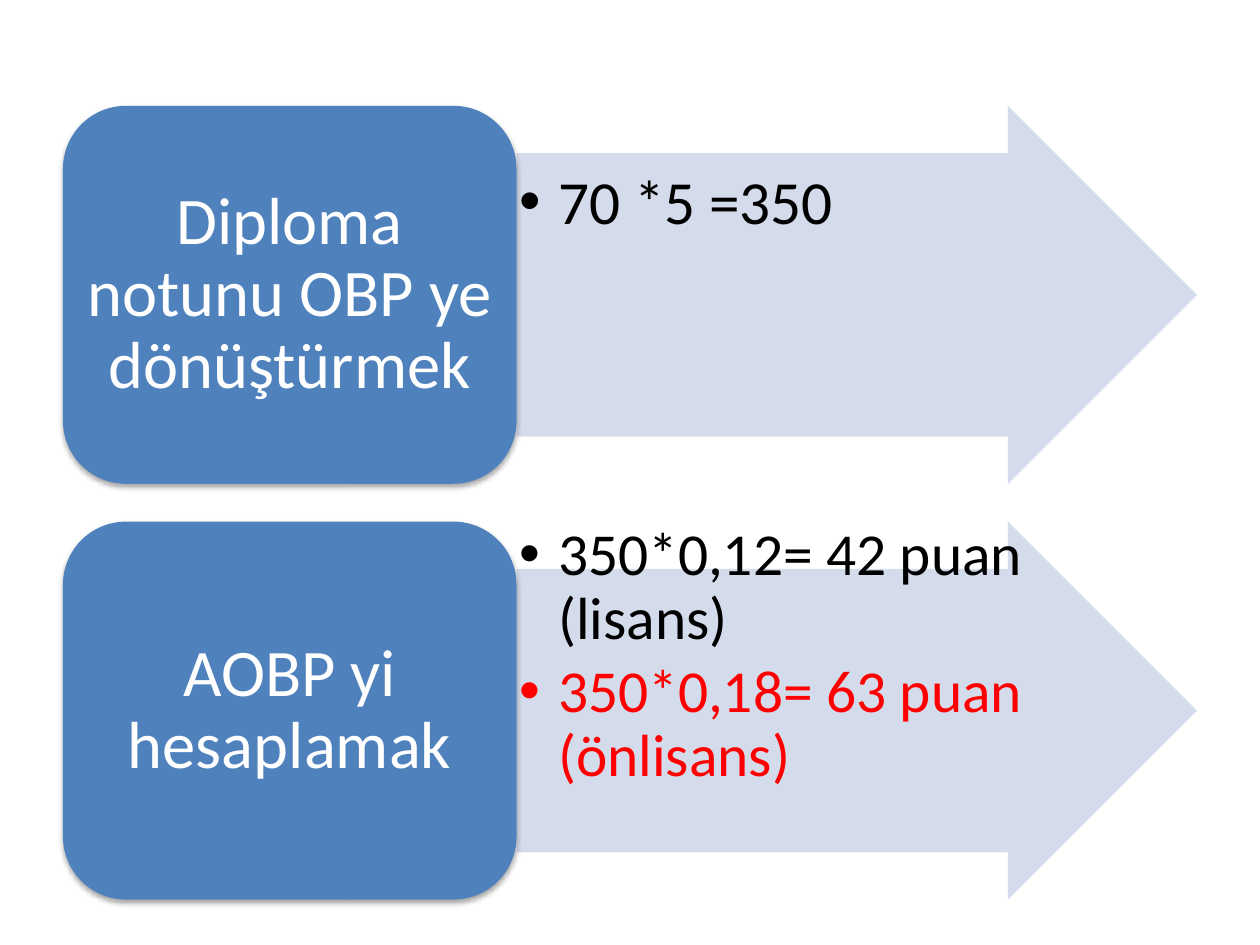
"""Build a slide of two calculation steps, each a box with an arrow of results."""
from lxml.etree import SubElement as Sub
from pptx import Presentation
from pptx.dml.color import RGBColor
from pptx.enum.shapes import MSO_SHAPE as Shape
from pptx.enum.text import MSO_ANCHOR as Anchor, PP_ALIGN as Align
from pptx.oxml.ns import qn
from pptx.util import Inches, Pt

BLUE = RGBColor(0x4F, 0x81, 0xBD)
PALE = RGBColor(0xD0, 0xD8, 0xE8)
WHITE = RGBColor(255, 255, 255)
BLACK = RGBColor(0, 0, 0)
RED = RGBColor(255, 0, 0)

STEPS = [
    {"title": "Diploma notunu OBP ye dönüştürmek", "size": 35, "drop": 0.53,
     "items": [("70 *5 =350", BLACK)]},
    {"title": "AOBP yi hesaplamak", "size": 34, "drop": 0.02,
     "items": [("350*0,12= 42 puan (lisans)", BLACK),
               ("350*0,18= 63 puan (önlisans)", RED)]},
]
LEFT, TOP, HIGH, GAP = 0.5, 0.84, 3, 0.3
BOX, ARROW = 3.6, 5.4


def put(obj, vals):
    for key, val in vals.items():
        setattr(obj, key, val)


def node(top, tag, **vals):
    return Sub(top, qn(tag), {key: str(val) for key, val in vals.items()})


def frame(shape, side, top, anchor):
    text = shape.text_frame
    put(text, {"word_wrap": True, "vertical_anchor": anchor,
               "margin_left": Inches(side), "margin_right": Inches(side),
               "margin_top": Inches(top), "margin_bottom": Inches(0.02)})
    return text


def write(para, words, size, color, after, align):
    put(para, {"line_spacing": 0.9, "space_after": Pt(after), "alignment": align})
    run = para.add_run()
    run.text = words
    put(run.font, {"name": "Calibri", "size": Pt(size)})
    run.font.color.rgb = color


def draw(shapes, kind, area, color):
    shape = shapes.add_shape(kind, *area)
    shape.shadow.inherit = False
    shape.fill.solid()
    shape.fill.fore_color.rgb = color
    shape.line.fill.background()
    return shape


def shade(shape):
    glow = node(shape._element.spPr.find(qn("a:effectLst")), "a:outerShdw",
                blurRad=Pt(3.1), dist=Pt(1.8), dir=5400000, rotWithShape=0)
    node(node(glow, "a:srgbClr", val="000000"), "a:alpha", val=35000)


def bullet(para):
    props = para._p.get_or_add_pPr()
    props.set("marL", str(Inches(0.31)))
    props.set("indent", str(-Inches(0.31)))
    node(props, "a:buFont", typeface="Arial")
    node(props, "a:buChar", char="•")


def step(shapes, top, data):
    area = [Inches(n) for n in (LEFT + BOX, top, ARROW, HIGH)]
    arrow = draw(shapes, Shape.RIGHT_ARROW, area, PALE)
    arrow.adjustments[0] = 0.75
    tint = arrow._element.spPr.find(qn("a:solidFill"))[0]
    node(tint, "a:alpha", val=90000)

    text = frame(shapes.add_textbox(*area), 0.02, data["drop"], Anchor.TOP)
    for num, (words, color) in enumerate(data["items"]):
        para = text.add_paragraph() if num else text.paragraphs[0]
        write(para, words, data["size"], color, 5, Align.LEFT)
        bullet(para)

    area = [Inches(n) for n in (LEFT, top, BOX, HIGH)]
    box = draw(shapes, Shape.ROUNDED_RECTANGLE, area, BLUE)
    shade(box)
    text = frame(box, 0.02, 0.02, Anchor.MIDDLE)
    write(text.paragraphs[0], data["title"], 38, WHITE, 0, Align.CENTER)


def main():
    deck = Presentation()
    put(deck, {"slide_width": Inches(10), "slide_height": Inches(7.5)})
    slide = deck.slides.add_slide(deck.slide_layouts[6])
    for num, data in enumerate(STEPS):
        step(slide.shapes, TOP + num * (HIGH + GAP), data)
    deck.save("out.pptx")


if __name__ == "__main__":
    main()
